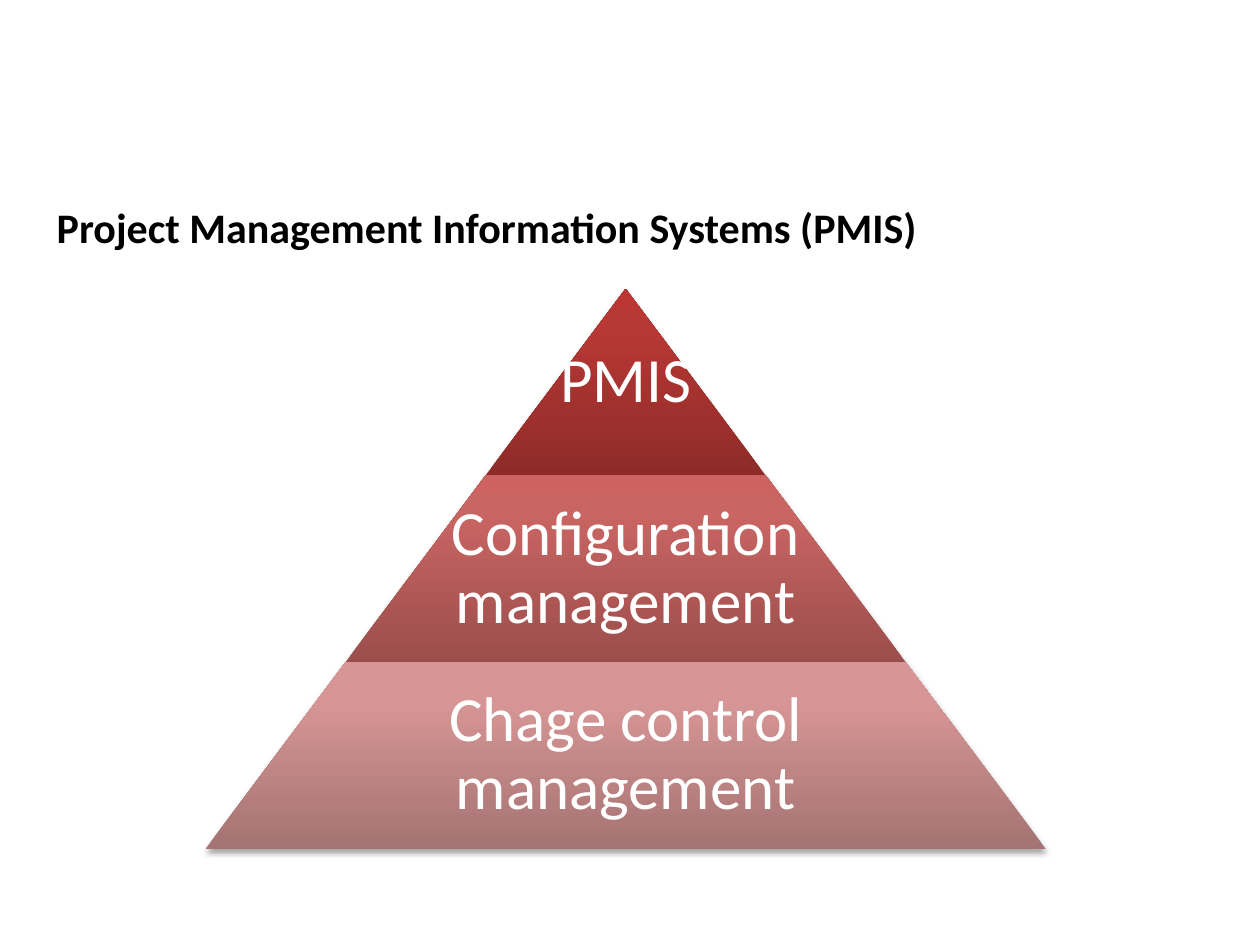
import dataclasses

import lxml.etree
import pptx
import pptx.dml.color
import pptx.enum.shapes
import pptx.enum.text
import pptx.oxml.ns
import pptx.util

Pt = pptx.util.Pt
RGBColor = pptx.dml.color.RGBColor
Align = pptx.enum.text.PP_ALIGN
Anchor = pptx.enum.text.MSO_ANCHOR
qn = pptx.oxml.ns.qn

FONT = "Calibri"
BLACK = RGBColor(0x00, 0x00, 0x00)
WHITE = RGBColor(0xFF, 0xFF, 0xFF)
RED = (RGBColor(0x8E, 0x2B, 0x28), RGBColor(0xB8, 0x38, 0x35), RGBColor(0xBB, 0x36, 0x32))
ROSE = (RGBColor(0x9B, 0x4E, 0x4C), RGBColor(0xC9, 0x65, 0x63), RGBColor(0xCC, 0x63, 0x61))
PINK = (RGBColor(0xA5, 0x73, 0x73), RGBColor(0xD7, 0x96, 0x95), RGBColor(0xD9, 0x95, 0x94))
STOP_PERCENTS = (0, 80, 100)

# Pyramid geometry, in points
CENTER = 357.5
APEX_TOP = 165
TIER_HEIGHT = 106.67
TIER_WIDTH_STEP = 160
SLOPE = 0.75


@dataclasses.dataclass(frozen=True)
class Tier:
    label: str
    colors: tuple[RGBColor, ...]
    label_share: float


TIERS = (
    Tier("PMIS", RED, 1),
    Tier("Configuration management", ROSE, 0.65),
    Tier("Chage control management", PINK, 0.65),
)


def add_run(paragraph, text: str, size: float, color: RGBColor, bold: bool = False) -> None:
    run = paragraph.add_run()
    run.text = text
    run.font.name = FONT
    run.font.size = Pt(size)
    run.font.bold = bold
    run.font.color.rgb = color


def set_gradient(shape, colors: tuple[RGBColor, ...]) -> None:
    """Three stops running from bottom to top."""
    shape.fill.gradient()
    shape.fill.gradient_angle = 90
    stops = shape._element.spPr.find(".//" + qn("a:gsLst"))
    for stop in list(stops):
        stops.remove(stop)
    for percent, color in zip(STOP_PERCENTS, colors):
        stop = lxml.etree.SubElement(stops, qn("a:gs"), pos=str(percent * 1000))
        lxml.etree.SubElement(stop, qn("a:srgbClr"), val=str(color))


def set_shadow(shape) -> None:
    """Soft black shadow straight below the shape."""
    shape.shadow.inherit = False
    effects = shape._element.spPr.find(qn("a:effectLst"))
    shadow = lxml.etree.SubElement(
        effects, qn("a:outerShdw"), blurRad=str(Pt(3.1)), dist=str(Pt(1.8)),
        dir="5400000", rotWithShape="0")
    color = lxml.etree.SubElement(shadow, qn("a:srgbClr"), val=str(BLACK))
    lxml.etree.SubElement(color, qn("a:alpha"), val="35000")


def add_tier(slide, index: int, tier: Tier) -> None:
    top = APEX_TOP + index * TIER_HEIGHT
    width = (index + 1) * TIER_WIDTH_STEP
    shape = slide.shapes.add_shape(
        pptx.enum.shapes.MSO_SHAPE.TRAPEZOID,
        Pt(CENTER - width / 2), Pt(top), Pt(width), Pt(TIER_HEIGHT))
    shape.adjustments[0] = SLOPE
    set_gradient(shape, tier.colors)
    shape.line.fill.background()
    set_shadow(shape)

    label_width = width * tier.label_share
    label = slide.shapes.add_textbox(
        Pt(CENTER - label_width / 2), Pt(top), Pt(label_width), Pt(TIER_HEIGHT))
    frame = label.text_frame
    frame.word_wrap = True
    frame.vertical_anchor = Anchor.MIDDLE
    frame.margin_left = frame.margin_right = Pt(3.6)
    frame.margin_top = frame.margin_bottom = Pt(3.6)
    paragraph = frame.paragraphs[0]
    paragraph.alignment = Align.CENTER
    paragraph.line_spacing = 0.9
    add_run(paragraph, tier.label, 36, WHITE)


def add_title(slide, text: str) -> None:
    title = slide.shapes.title
    title.left, title.top, title.width, title.height = Pt(25.2), Pt(111.6), Pt(656), Pt(36.5)
    frame = title.text_frame
    frame.word_wrap = True
    frame.auto_size = pptx.enum.text.MSO_AUTO_SIZE.SHAPE_TO_FIT_TEXT
    frame.vertical_anchor = Anchor.TOP
    paragraph = frame.paragraphs[0]
    paragraph.alignment = Align.JUSTIFY
    add_run(paragraph, text, 24, BLACK, bold=True)


def main() -> None:
    presentation = pptx.Presentation()
    presentation.slide_width, presentation.slide_height = Pt(720), Pt(540)
    title_only = presentation.slide_layouts.get_by_name("Title Only")
    slide = presentation.slides.add_slide(title_only)

    # Heading
    add_title(slide, "Project Management Information Systems (PMIS)")

    # Pyramid, from apex to base
    for index, tier in enumerate(TIERS):
        add_tier(slide, index, tier)

    presentation.save("out.pptx")


if __name__ == "__main__":
    main()
